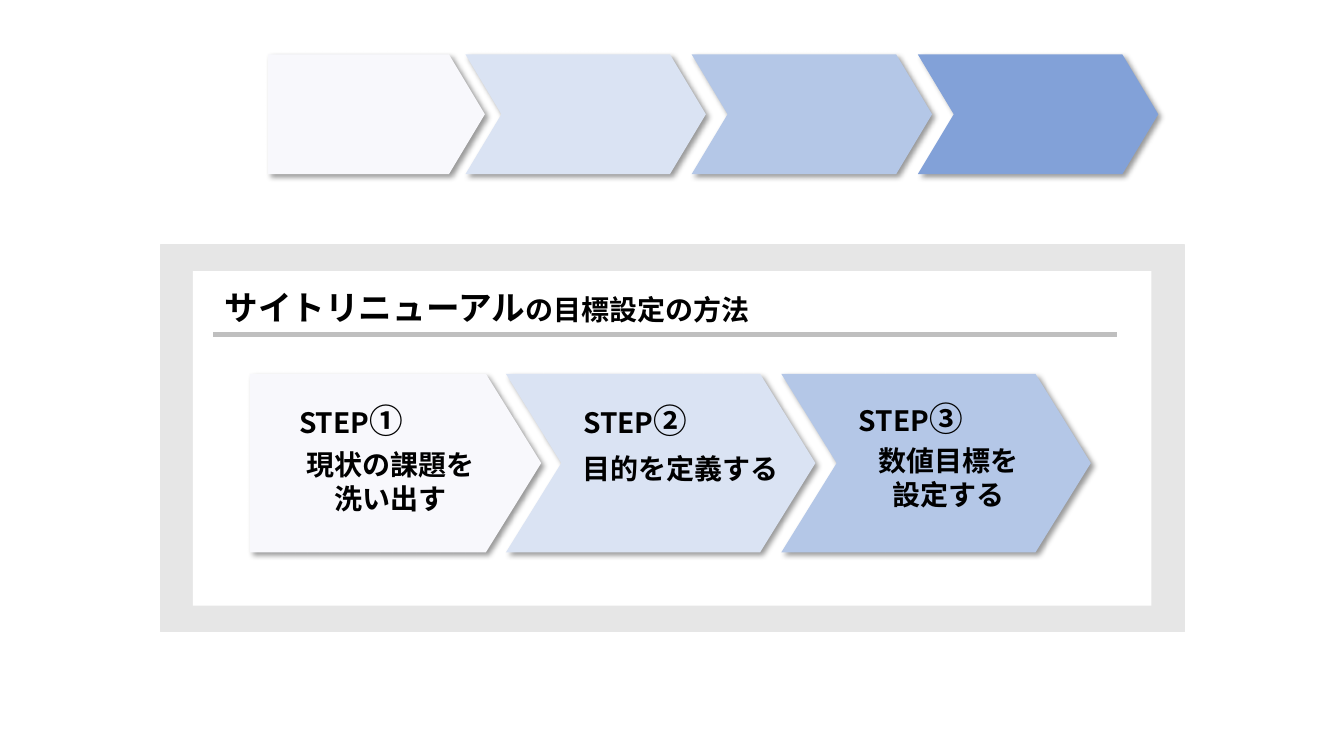
import lxml.etree
import pptx
import pptx.dml.color
import pptx.enum.shapes
import pptx.enum.text
import pptx.oxml
import pptx.oxml.ns
import pptx.util

Cm = pptx.util.Cm
Pt = pptx.util.Pt
RGBColor = pptx.dml.color.RGBColor
Shape = pptx.enum.shapes.MSO_SHAPE
Align = pptx.enum.text.PP_ALIGN

FONT = "Noto Sans CJK JP"
BLACK = RGBColor(0x00, 0x00, 0x00)
WHITE = RGBColor(0xFF, 0xFF, 0xFF)
FRAME_GREY = RGBColor(0xE6, 0xE6, 0xE6)
RULE_GREY = RGBColor(0xBF, 0xBF, 0xBF)
STEP_BLUES = [
    RGBColor(0xF8, 0xF8, 0xFC),
    RGBColor(0xDA, 0xE3, 0xF3),
    RGBColor(0xB4, 0xC7, 0xE7),
    RGBColor(0x82, 0xA1, 0xD8),
]
SHADOW = (
    f'<a:effectLst {pptx.oxml.ns.nsdecls("a")}>'
    f'<a:outerShdw blurRad="{Pt(4)}" dist="{Pt(3)}" dir="2700000" algn="tl" rotWithShape="0">'
    '<a:srgbClr val="000000"><a:alpha val="40000"/></a:srgbClr>'
    "</a:outerShdw></a:effectLst>"
)


def add_block(page, kind, box, fill, outline=None):
    """Add a filled preset shape without a shadow, box being in centimetres."""
    block = page.shapes.add_shape(kind, *map(Cm, box))
    block.shadow.inherit = False
    block.fill.solid()
    block.fill.fore_color.rgb = fill
    if outline is None:
        block.line.fill.background()
    else:
        block.line.color.rgb = outline
        block.line.width = Pt(1)
    return block


def add_text(page, box, paragraphs, align=Align.LEFT, wrap=False):
    """Add bold text from paragraphs that are lists of (wording, size) pairs."""
    frame = page.shapes.add_textbox(*map(Cm, box)).text_frame
    frame.word_wrap = wrap
    frame.auto_size = pptx.enum.text.MSO_AUTO_SIZE.SHAPE_TO_FIT_TEXT
    for index, pieces in enumerate(paragraphs):
        para = frame.add_paragraph() if index else frame.paragraphs[0]
        para.alignment = align
        for wording, size in pieces:
            span = para.add_run()
            span.text = wording
            span.font.size = Pt(size)
            span.font.bold = True
            span.font.color.rgb = BLACK
            span.font.name = FONT
            east_asian = lxml.etree.SubElement(span.font._element, pptx.oxml.ns.qn("a:ea"))
            east_asian.set("typeface", FONT)


def add_arrow_row(page, box, count, first_width, chevron_left, pitch, point):
    """Place a pentagon and then evenly spaced chevrons that end at the box's right edge."""
    left, top, width, height = box
    chevron_width = width - chevron_left - pitch * (count - 2)
    for index, blue in enumerate(STEP_BLUES[:count]):
        if index == 0:
            kind, place, span_width = Shape.PENTAGON, left, first_width
        else:
            kind, span_width = Shape.CHEVRON, chevron_width
            place = left + chevron_left + pitch * (index - 1)
        arrow = add_block(page, kind, (place, top, span_width, height), blue)
        arrow.adjustments[0] = point
        properties = arrow._element.spPr
        properties.remove(properties.find(pptx.oxml.ns.qn("a:effectLst")))
        properties.append(pptx.oxml.parse_xml(SHADOW))


def add_heading(page, box):
    """Place the panel title and the rule under it."""
    left, top, width, height = box
    add_text(page, (left + 0.03, top, 13.92, 1.27),
             [[("サイトリニューアル", 24), ("の目標設定の方法", 20)]])
    bottom = Cm(top + height)
    rule = page.shapes.add_connector(
        pptx.enum.shapes.MSO_CONNECTOR.STRAIGHT, Cm(left), bottom, Cm(left + width), bottom)
    rule.line.color.rgb = RULE_GREY
    rule.line.width = Pt(3)
    lxml.etree.SubElement(rule._element.spPr, pptx.oxml.ns.qn("a:effectLst"))


def add_steps(page, box):
    """Place the three step arrows with their labels and descriptions."""
    left, top = box[:2]
    add_arrow_row(page, box, 3, 7.34, 6.45, 6.94, 0.31)
    labels = [("①", 0.99, 0.54), ("②", 8.15, 0.54), ("③", 15.09, 0.49)]
    for number, across, down in labels:
        add_text(page, (left + across, top + down, 3.25, 1.27), [[("STEP", 20), (number, 24)]])
    descriptions = [
        (["現状の課題を洗い出す"], (1.12, 1.73, 4.85, 1.96), Align.CENTER, True),
        (["目的を定義する"], (8.13, 1.83, 5.51, 1.12), Align.LEFT, False),
        (["数値目標を", "設定する"], (15.57, 1.63, 4.06, 1.96), Align.CENTER, False),
    ]
    for lines, (across, down, width, height), align, wrap in descriptions:
        add_text(page, (left + across, top + down, width, height),
                 [[(line, 20)] for line in lines], align, wrap)


def add_panel(page, box):
    """Place the grey frame, its white inside, the heading and the steps."""
    left, top, width, height = box
    add_block(page, Shape.RECTANGLE, box, FRAME_GREY, FRAME_GREY)
    add_block(page, Shape.RECTANGLE,
              (left + 0.82, top + 0.66, width - 1.65, height - 1.32), WHITE)
    add_heading(page, (left + 1.34, top + 0.94, 22.76, 1.32))
    add_steps(page, (left + 2.26, top + 3.25, 21.19, 4.5))


def main():
    """Build the slide and save it."""
    deck = pptx.Presentation()
    deck.slide_width, deck.slide_height = Cm(33.87), Cm(19.05)
    page = deck.slides.add_slide(deck.slide_layouts[6])
    add_panel(page, (4.04, 6.17, 25.81, 9.75))
    add_arrow_row(page, (6.76, 1.37, 22.43, 3.02), 4, 5.46, 4.97, 5.7, 0.3)
    deck.save("out.pptx")


if __name__ == "__main__":
    main()
